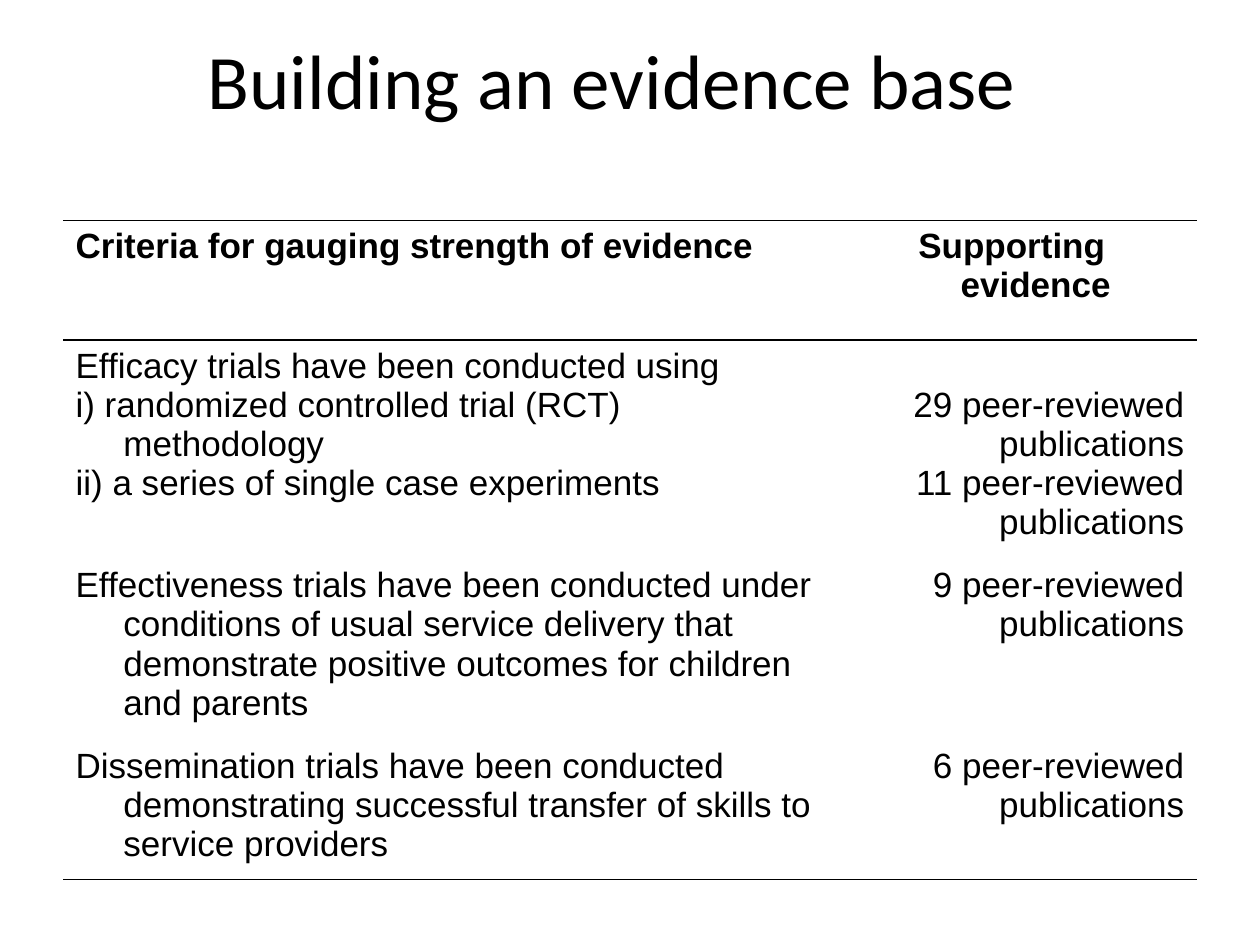
"""Build a slide with a ruled table of evidence criteria."""
from pptx import Presentation
from pptx.dml.color import RGBColor
from pptx.enum.text import MSO_ANCHOR, PP_ALIGN
from pptx.oxml import parse_xml
from pptx.oxml.ns import nsdecls
from pptx.util import Inches, Pt

LEFT, MID, RIGHT = PP_ALIGN.LEFT, PP_ALIGN.CENTER, PP_ALIGN.RIGHT
CENTER = MSO_ANCHOR.MIDDLE
INK = "000000"


def style(para, face, size, bold, align):
    para.alignment = align
    for run in para.runs:
        font = run.font
        font.name, font.size, font.bold = face, Pt(size), bold
        font.color.rgb = RGBColor.from_string(INK)


def rule(cell, sides):
    props = cell._tc.get_or_add_tcPr()
    for spot, side in enumerate("LRTB"):
        paint = f'<a:solidFill><a:srgbClr val="{INK}"/></a:solidFill>' if side in sides else "<a:noFill/>"
        props.insert(spot, parse_xml(f'<a:ln{side} {nsdecls("a")} w="12700">{paint}</a:ln{side}>'))


deck = Presentation()
deck.slide_width, deck.slide_height = Inches(10), Inches(7.5)
slide = deck.slides.add_slide(deck.slide_layouts[6])
wide, high = deck.slide_width, deck.slide_height
edge, span = int(wide * 0.05), int(wide * 0.9)

title = slide.shapes.add_textbox(edge, 0, span, high // 6).text_frame
title.word_wrap = True
title.vertical_anchor = CENTER
title.margin_right = Inches(0.38)
title.text = "Building an evidence base"
style(title.paragraphs[0], "Calibri", 44, False, MID)

rows = [
    ("Criteria for gauging strength of evidence", "Supporting evidence"),
    ("Efficacy trials have been conducted using\n"
     "i) randomized controlled trial (RCT) methodology\n"
     "ii) a series of single case experiments",
     "29 peer-reviewed publications\n11 peer-reviewed publications"),
    ("Effectiveness trials have been conducted under conditions of usual service "
     "delivery that demonstrate positive outcomes for children and parents",
     "9 peer-reviewed publications"),
    ("Dissemination trials have been conducted demonstrating successful transfer "
     "of skills to service providers",
     "6 peer-reviewed publications"),
]
tall = [0.95, 1.65, 1.34, 1.03]
cols = [6.06, 2.94]
lines = ["TB", "T", "", "B"]

grid = slide.shapes.add_table(len(rows), len(cols), edge, Inches(1.75), span, Inches(sum(tall))).table
grid.first_row = grid.horz_banding = False
for col, width in zip(grid.columns, cols):
    col.width = Inches(width)
for r, texts in enumerate(rows):
    grid.rows[r].height = Inches(tall[r])
    for c, text in enumerate(texts):
        cell = grid.cell(r, c)
        cell.text_frame.text = text
        cell.fill.background()
        rule(cell, lines[r])
        align = LEFT if c == 0 else MID if r == 0 else RIGHT
        for para in cell.text_frame.paragraphs:
            style(para, "Arial", 20, r == 0, align)
            props = para._p.get_or_add_pPr()
            props.set("marL", str(Inches(0.38)))
            props.set("indent", str(-Inches(0.38)))
grid.cell(1, 1).margin_top = Inches(0.36)

deck.save("out.pptx")
